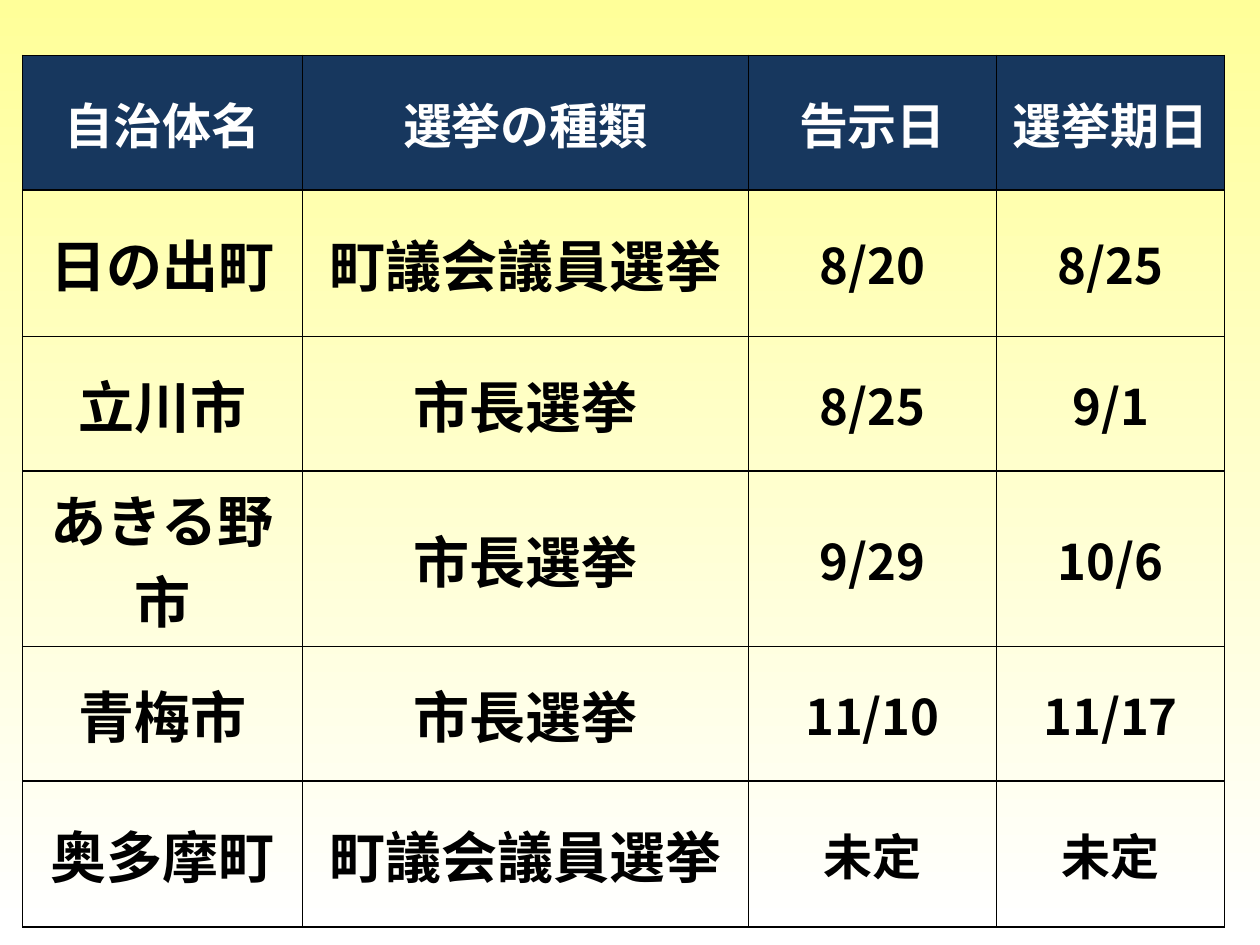
from lxml import etree
from pptx import Presentation, util as u
from pptx.dml.color import RGBColor
from pptx.enum import text
from pptx.oxml import ns

THEME = {
    "font": "Noto Sans CJK JP",
    "navy": "17375E",
    "white": "FFFFFF",
    "black": "000000",
    "yellow": "FFFF99",
    "name_size": 32,
    "small_size": 28,
    "border": 1,
}
COLUMNS = [2.22, 3.54, 1.97, 1.81]
ROWS = [1.07, 1.16, 1.07, 1.07, 1.07, 1.16]
SCHEDULE = [
    ["自治体名", "選挙の種類", "告示日", "選挙期日"],
    ["日の出町", "町議会議員選挙", "8/20", "8/25"],
    ["立川市", "市長選挙", "8/25", "9/1"],
    ["あきる野市", "市長選挙", "9/29", "10/6"],
    ["青梅市", "市長選挙", "11/10", "11/17"],
    ["奥多摩町", "町議会議員選挙", "未定", "未定"],
]


def color(name):
    return RGBColor.from_string(THEME[name])


def draw_borders(cell):
    properties = cell._tc.get_or_add_tcPr()
    for position, side in enumerate(("lnL", "lnR", "lnT", "lnB")):
        line = etree.Element(ns.qn(f"a:{side}"), w=str(u.Pt(THEME["border"])))
        solid = etree.SubElement(line, ns.qn("a:solidFill"))
        etree.SubElement(solid, ns.qn("a:srgbClr"), val=THEME["black"])
        properties.insert(position, line)


prs = Presentation()
prs.slide_width, prs.slide_height = u.Inches(10), u.Inches(7.5)
slide = prs.slides.add_slide(prs.slide_layouts[6])

backdrop = slide.background.fill
backdrop.gradient()
backdrop.gradient_angle = 270
for stop, (position, tint) in zip(backdrop.gradient_stops, [(0, "yellow"), (0.98, "white")]):
    stop.position = position
    stop.color.rgb = color(tint)

elections = slide.shapes.add_table(
    len(ROWS), len(COLUMNS), u.Inches(0.18), u.Inches(0.44),
    u.Inches(sum(COLUMNS)), u.Inches(sum(ROWS)),
).table
for column, width in zip(elections.columns, COLUMNS):
    column.width = u.Inches(width)
for row, height in zip(elections.rows, ROWS):
    row.height = u.Inches(height)

for r, entries in enumerate(SCHEDULE):
    for c, entry in enumerate(entries):
        header = r == 0
        cell = elections.cell(r, c)
        cell.vertical_anchor = text.MSO_ANCHOR.MIDDLE
        if header:
            cell.fill.solid()
            cell.fill.fore_color.rgb = color("navy")
        else:
            cell.fill.background()
        draw_borders(cell)

        paragraph = cell.text_frame.paragraphs[0]
        paragraph.alignment = text.PP_ALIGN.CENTER
        run = paragraph.add_run()
        run.text = entry
        run.font.bold = True
        run.font.size = u.Pt(THEME["small_size" if header or c >= 2 else "name_size"])
        run.font.color.rgb = color("white" if header else "black")
        run.font.name = THEME["font"]
        etree.SubElement(run.font._element, ns.qn("a:ea"), typeface=THEME["font"])

prs.save("out.pptx")
